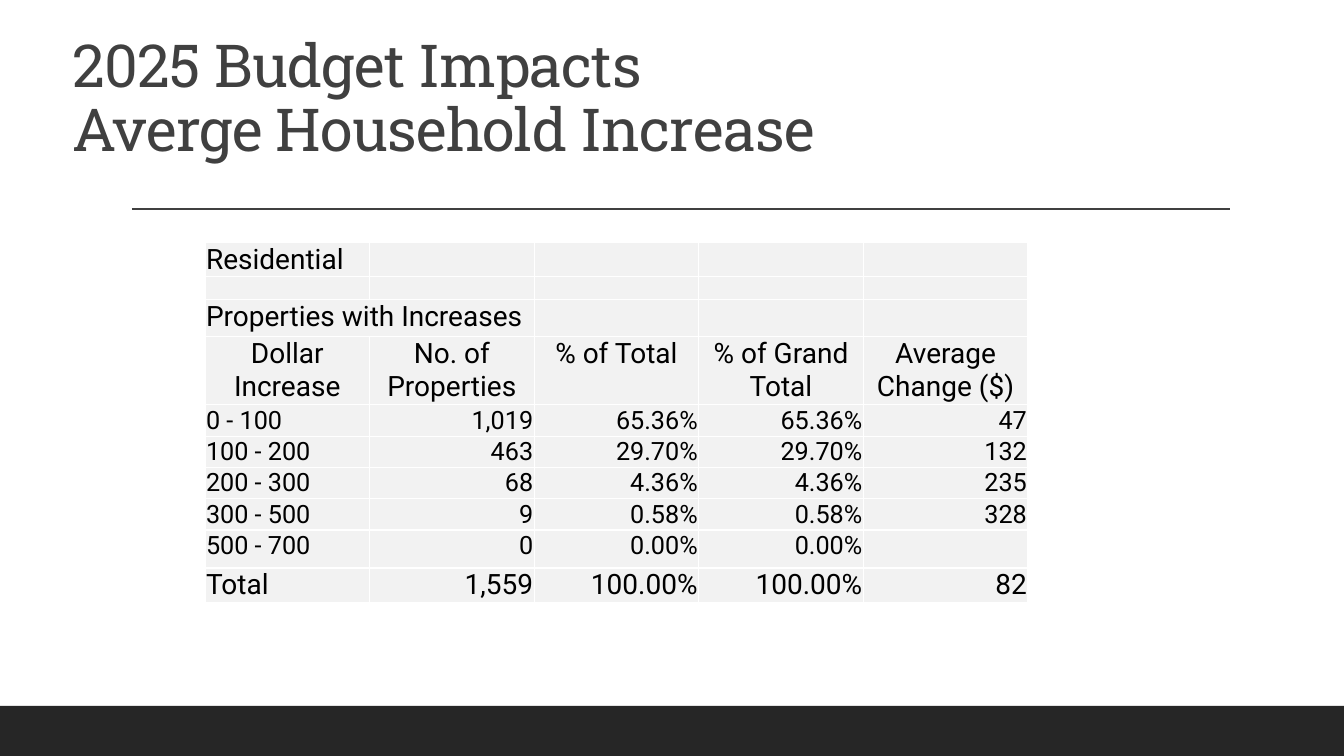
from lxml import etree
from pptx import Presentation
from pptx import util as u
from pptx.dml.color import RGBColor
from pptx.enum import shapes, text
from pptx.oxml.ns import qn

PX = 914400 / 100.8
HUES = {"ink": "404040", "bar": "262626", "cell": "F2F2F2",
        "edge": "FFFFFF", "text": "000000"}
LEFT, MID, RIGHT = text.PP_ALIGN.LEFT, text.PP_ALIGN.CENTER, text.PP_ALIGN.RIGHT

# Row height, font size, alignment after the first column, texts
ROWS = [
    (33, 20, LEFT, ["Residential"]),
    (23, 10, LEFT, []),
    (37, 20, LEFT, ["Properties with Increases"]),
    (67, 20, MID, ["Dollar Increase", "No. of Properties", "% of Total",
                   "% of Grand Total", "Average Change ($)"]),
    (31, 18, RIGHT, ["0 - 100", "1,019", "65.36%", "65.36%", "47"]),
    (31, 18, RIGHT, ["100 - 200", "463", "29.70%", "29.70%", "132"]),
    (31, 18, RIGHT, ["200 - 300", "68", "4.36%", "4.36%", "235"]),
    (31, 18, RIGHT, ["300 - 500", "9", "0.58%", "0.58%", "328"]),
    (38, 18, RIGHT, ["500 - 700", "0", "0.00%", "0.00%"]),
    (33, 20, RIGHT, ["Total", "1,559", "100.00%", "100.00%", "82"]),
]


def px(n):
    return u.Emu(round(n * PX))


def hue(name):
    return RGBColor.from_string(HUES[name])


def style(run, size, face, name):
    run.font.size, run.font.name = u.Pt(size), face
    run.font.color.rgb = hue(name)


def frame(slide, x, y, w, h):
    # Bottom bar
    bar = slide.shapes.add_shape(shapes.MSO_SHAPE.RECTANGLE,
                                 px(x), px(y + h - 50), px(w), px(50))
    bar.shadow.inherit = False
    bar.fill.solid()
    bar.fill.fore_color.rgb = hue("bar")
    bar.line.fill.background()
    # Rule under the title
    rule = slide.shapes.add_connector(shapes.MSO_CONNECTOR.STRAIGHT, px(x + 132),
                                      px(y + 209), px(x + 1230), px(y + 209))
    rule.line.color.rgb = hue("ink")
    rule.line.width = u.Pt(1)
    etree.SubElement(rule._element.spPr, qn("a:effectLst"))


def title(slide, x, y, w, h):
    box = slide.shapes.add_textbox(px(x), px(y), px(w), px(h)).text_frame
    box.word_wrap = True
    box.vertical_anchor = text.MSO_ANCHOR.BOTTOM
    box.text = "2025 Budget Impacts \vAverge Household Increase"
    para = box.paragraphs[0]
    para.line_spacing = 0.9
    for run in para.runs:
        style(run, 42.3, "Roboto Slab", "ink")
        run.font._element.set("spc", "-50")


def edges(cell):
    props = cell._tc.get_or_add_tcPr()
    for side in ("lnL", "lnR", "lnT", "lnB"):
        line = etree.SubElement(props, qn("a:" + side), w=str(u.Pt(1)))
        fill = etree.SubElement(line, qn("a:solidFill"))
        etree.SubElement(fill, qn("a:srgbClr"), val=HUES["edge"])


def fill_cell(cell, words, size, align):
    edges(cell)
    cell.fill.solid()
    cell.fill.fore_color.rgb = hue("cell")
    cell.margin_left = cell.margin_right = cell.margin_top = px(1)
    cell.margin_bottom = 0
    para = cell.text_frame.paragraphs[0]
    para.text = words
    para.alignment = align
    for run in para.runs:
        style(run, size, "Roboto", "text")
    if not words:  # keeps empty cells from stretching their row
        etree.SubElement(para._p, qn("a:endParaRPr"), sz="1000")


def grid(slide, x, y, w):
    high = sum(row[0] for row in ROWS)
    cols = 5
    table = slide.shapes.add_table(len(ROWS), cols, px(x), px(y),
                                   px(w), px(high)).table
    table.first_row = table.horz_banding = False
    for col in table.columns:
        col.width = px(w / cols)
    for r, (tall, size, align, words) in enumerate(ROWS):
        table.rows[r].height = px(tall)
        for c in range(cols):
            side = LEFT if c == 0 and align == RIGHT else align
            word = words[c] if c < len(words) else ""
            fill_cell(table.cell(r, c), word, size, side)
    # Subheading spans two columns
    table.cell(2, 0).merge(table.cell(2, 1))


def main():
    deck = Presentation()
    deck.slide_width, deck.slide_height = px(1344), px(756)
    slide = deck.slides.add_slide(deck.slide_layouts[6])
    frame(slide, 0, 0, 1344, 756)
    title(slide, 63, 31, 1167, 138)
    grid(slide, 205, 242, 823)
    deck.save("out.pptx")


if __name__ == "__main__":
    main()
